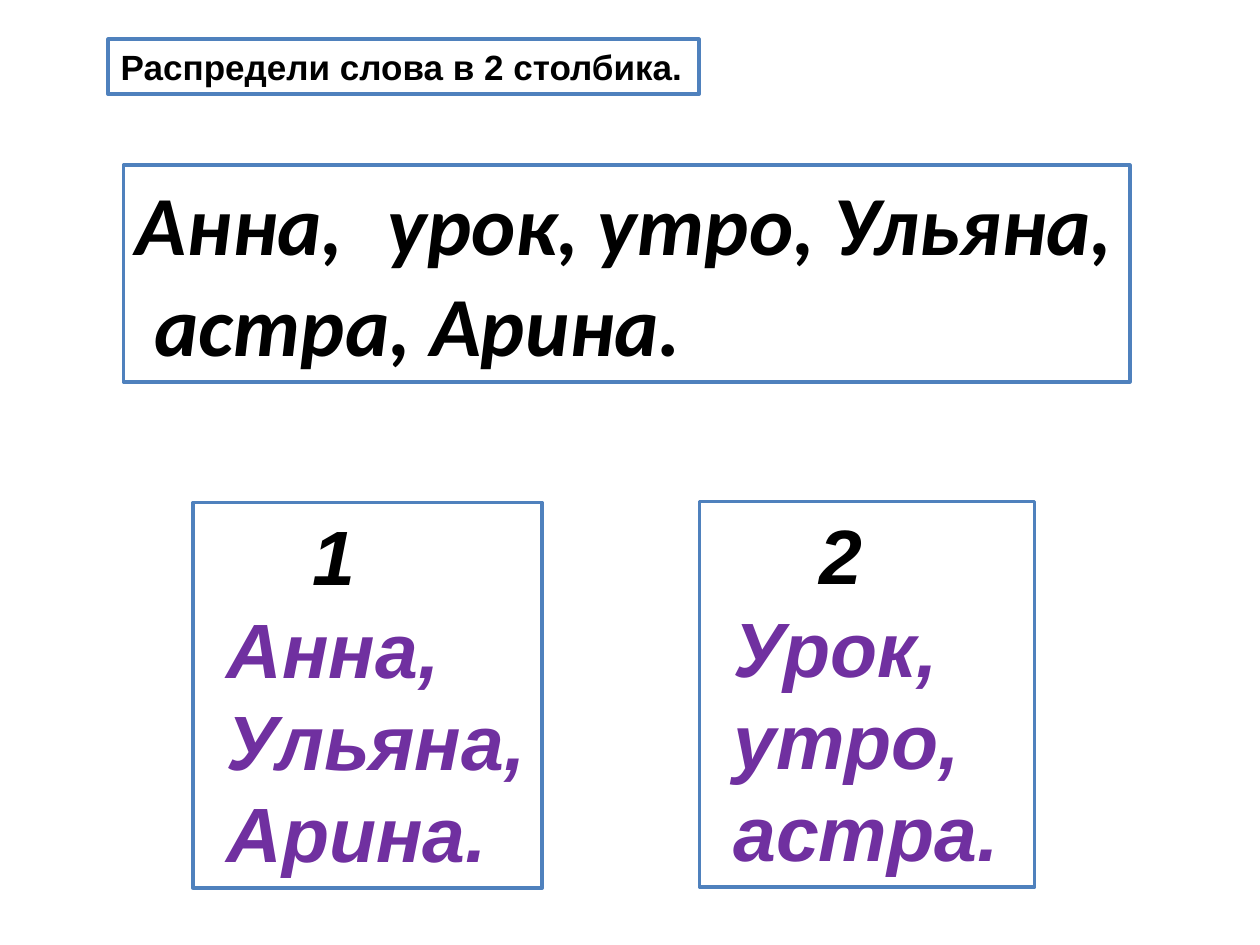
"""Build a slide that sorts words into two columns."""
from lxml.etree import SubElement
from pptx import Presentation
from pptx.dml.color import RGBColor
from pptx.enum.shapes import MSO_SHAPE as Shape
from pptx.enum.text import MSO_ANCHOR as Anchor, MSO_AUTO_SIZE as AutoSize, PP_ALIGN as Align
from pptx.oxml.ns import qn
from pptx.util import Cm, Pt

COLORS = {"paper": "FFFFFF", "border": "4F81BD", "text": "000000", "answer": "7030A0"}

HEADING = {"area": (2.18, 0.79, 11.91, 1.11), "font": ("Arial", 20, False),
           "lines": [("Распредели слова в 2 столбика.", 0, "text")]}
WORDS = {"area": (2.49, 3.33, 20.29, 4.37), "font": ("Calibri", 48, True), "tab": 5.05,
         "lines": [("Анна,\tурок, утро, Ульяна,", 0, "text"),
                   ("астра, Арина.", 0.38, "text")]}
COLUMNS = [
    ((3.89, 10.13, 7.04, 7.77), "1", ["Анна,", "Ульяна,", "Арина."]),
    ((14.1, 10.11, 6.76, 7.77), "2", ["Урок,", "утро,", "астра."]),
]
NUMBER_INDENT, ANSWER_INDENT = 2.16, 0.43


def color(name):
    return RGBColor.from_string(COLORS[name])


def fill_box(shape, area, font, lines, tab=None):
    shape.left, shape.top, shape.width, shape.height = map(Cm, area)
    shape.fill.solid()
    shape.fill.fore_color.rgb = color("paper")
    shape.line.color.rgb = color("border")
    shape.line.width = Pt(2)
    frame = shape.text_frame
    frame.word_wrap = True
    frame.auto_size = AutoSize.NONE
    frame.vertical_anchor = Anchor.TOP
    name, size, italic = font
    for index, (text, indent, text_color) in enumerate(lines):
        paragraph = frame.add_paragraph() if index else frame.paragraphs[0]
        paragraph.alignment = Align.LEFT
        paragraph.space_before = Pt(0)
        properties = paragraph._p.get_or_add_pPr()
        properties.set("marL", str(Cm(indent)))
        properties.set("indent", "0")
        SubElement(properties, qn("a:buNone"))
        if tab:
            tabs = SubElement(properties, qn("a:tabLst"))
            SubElement(tabs, qn("a:tab"), pos=str(Cm(tab)), algn="l")
        run = paragraph.add_run()
        run.text = text
        run.font.name, run.font.size = name, Pt(size)
        run.font.bold, run.font.italic = True, italic
        run.font.color.rgb = color(text_color)


def main():
    presentation = Presentation()
    presentation.slide_width, presentation.slide_height = Cm(25.4), Cm(19.05)
    slide = presentation.slides.add_slide(presentation.slide_layouts.get_by_name("Two Content"))
    fill_box(slide.shapes.title, **HEADING)
    word_box = slide.shapes.add_shape(Shape.RECTANGLE, 0, 0, 0, 0)
    word_box.shadow.inherit = False
    fill_box(word_box, **WORDS)
    for index, (area, number, answers) in enumerate(COLUMNS, start=1):
        lines = [(number, NUMBER_INDENT, "text")]
        lines += [(answer, ANSWER_INDENT, "answer") for answer in answers]
        fill_box(slide.placeholders[index], area, ("Arial", 44, True), lines)
    presentation.save("out.pptx")


if __name__ == "__main__":
    main()
